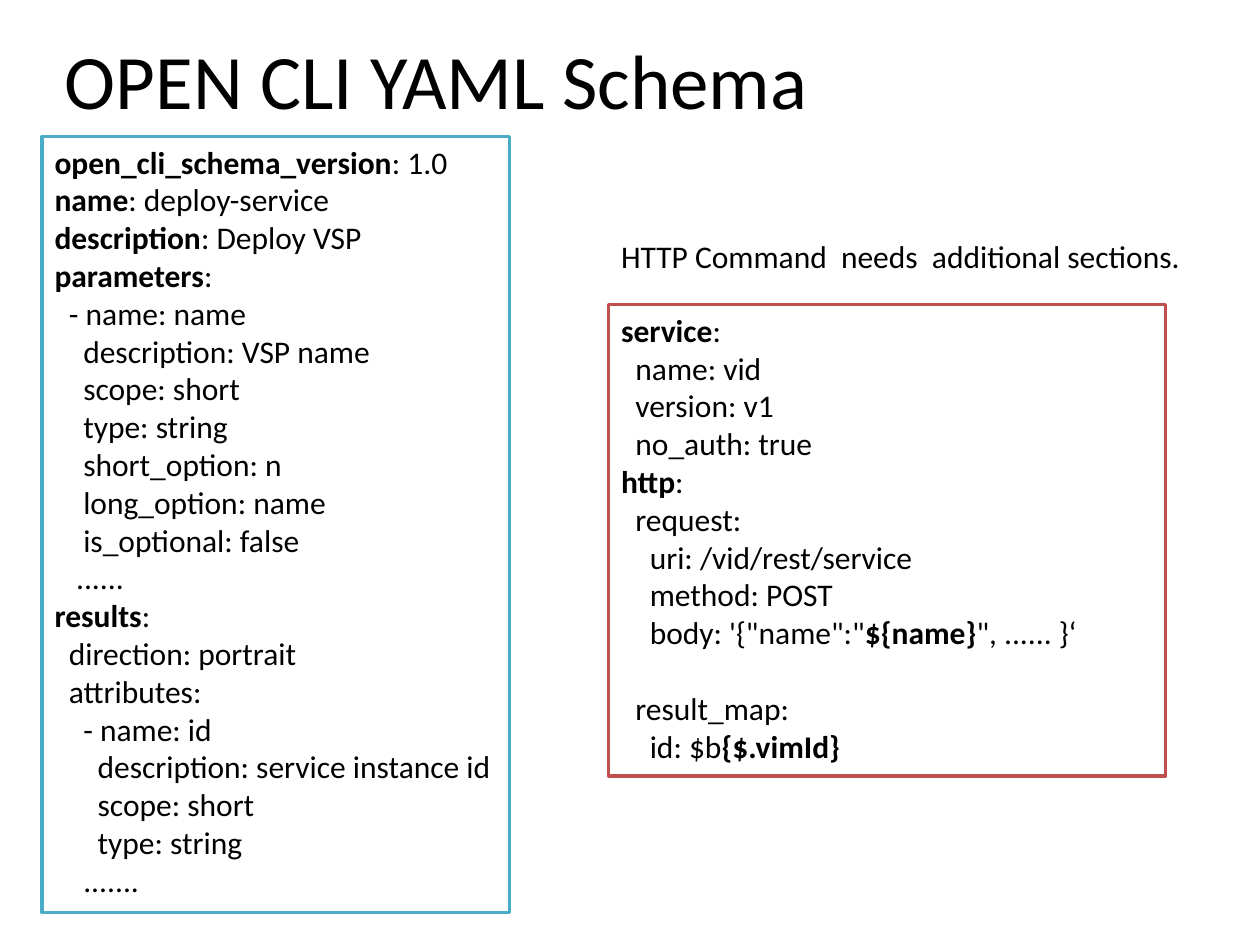
from pptx import Presentation
from pptx.dml.color import RGBColor
from pptx.enum.shapes import MSO_SHAPE as Shape
from pptx.enum.text import MSO_ANCHOR as Anchor, MSO_AUTO_SIZE as AutoSize, PP_ALIGN as Align
from pptx.util import Cm, Pt

BLACK = RGBColor(0x00, 0x00, 0x00)
WHITE = RGBColor(0xFF, 0xFF, 0xFF)
TEAL = RGBColor(0x4B, 0xAC, 0xC6)
RED = RGBColor(0xC0, 0x50, 0x4D)

COMMAND_SCHEMA = [
    (0, "**open_cli_schema_version**: 1.0"),
    (0, "**name**: deploy-service"),
    (0, "**description**: Deploy VSP"),
    (0, "**parameters**:"),
    (1, "- name: name"),
    (2, "description: VSP name"),
    (2, "scope: short"),
    (2, "type: string"),
    (2, "short_option: n"),
    (2, "long_option: name"),
    (2, "is_optional: false"),
    (1.5, "......"),
    (0, "**results**:"),
    (1, "direction: portrait"),
    (1, "attributes:"),
    (2, "- name: id"),
    (3, "description: service instance id"),
    (3, "scope: short"),
    (3, "type: string"),
    (2, "......."),
]
HTTP_REQUEST = [
    (0, "**service**:"),
    (1, "name: vid"),
    (1, "version: v1"),
    (1, "no_auth: true"),
    (0, "**http**:"),
    (1, "request:"),
    (2, "uri: /vid/rest/service"),
    (2, "method: POST"),
    (2, "body: '{\"name\":\"**${name}**\", ...... }‘"),
]
HTTP_RESULT = [
    (1, "result_map:"),
    (2, "id: $b**{$.vimId}**"),
]


class SchemaSlide:
    """Draws text and bordered YAML listings on one slide in a shared style."""

    font_name = "Calibri"
    body_size = Pt(18)
    blank_line = Pt(22)
    indent = Cm(0.29)

    def __init__(self, slide):
        self.slide = slide

    def style(self, paragraph, size):
        paragraph.alignment = Align.LEFT
        paragraph.font.name = self.font_name
        paragraph.font.size = size
        paragraph.font.color.rgb = BLACK

    def text(self, words, left, top, width, height, size=body_size, anchor=Anchor.TOP, wrap=False):
        frame = self.slide.shapes.add_textbox(left, top, width, height).text_frame
        frame.word_wrap = wrap
        frame.vertical_anchor = anchor
        frame.text = words
        self.style(frame.paragraphs[0], size)

    def listing(self, sections, border, left, top, width, height, wrap=False):
        box = self.slide.shapes.add_shape(Shape.RECTANGLE, left, top, width, height)
        box.shadow.inherit = False
        box.fill.solid()
        box.fill.fore_color.rgb = WHITE
        box.line.color.rgb = border
        box.line.width = Pt(2)
        frame = box.text_frame
        frame.word_wrap = wrap
        frame.auto_size = AutoSize.SHAPE_TO_FIT_TEXT
        frame.vertical_anchor = Anchor.TOP
        paragraph = frame.paragraphs[0]
        for section_number, section in enumerate(sections):
            for line_number, (level, line) in enumerate(section):
                if section_number or line_number:
                    paragraph = frame.add_paragraph()
                self.style(paragraph, self.body_size)
                if section_number and not line_number:
                    paragraph.space_before = self.blank_line
                if level:
                    paragraph._p.get_or_add_pPr().set("marL", str(round(level * self.indent)))
                self.yaml_line(paragraph, line)

    def yaml_line(self, paragraph, line):
        for position, part in enumerate(line.split("**")):
            if part:
                run = paragraph.add_run()
                run.text = part
                run.font.bold = position % 2 == 1


def main():
    deck = Presentation()
    deck.slide_width, deck.slide_height = Cm(25.4), Cm(19.05)
    schema = SchemaSlide(deck.slides.add_slide(deck.slide_layouts[6]))
    schema.text("OPEN CLI YAML Schema", Cm(1.06), Cm(0), Cm(22.86), Cm(3.18),
                size=Pt(44), anchor=Anchor.MIDDLE, wrap=True)
    schema.listing([COMMAND_SCHEMA], TEAL, Cm(0.85), Cm(2.75), Cm(9.42), Cm(15.65))
    schema.listing([HTTP_REQUEST, HTTP_RESULT], RED,
                   Cm(12.27), Cm(6.14), Cm(11.23), Cm(9.5), wrap=True)
    schema.text("HTTP Command  needs  additional sections.",
                Cm(12.27), Cm(4.66), Cm(11.91), Cm(1.03))
    deck.save("out.pptx")


if __name__ == "__main__":
    main()
